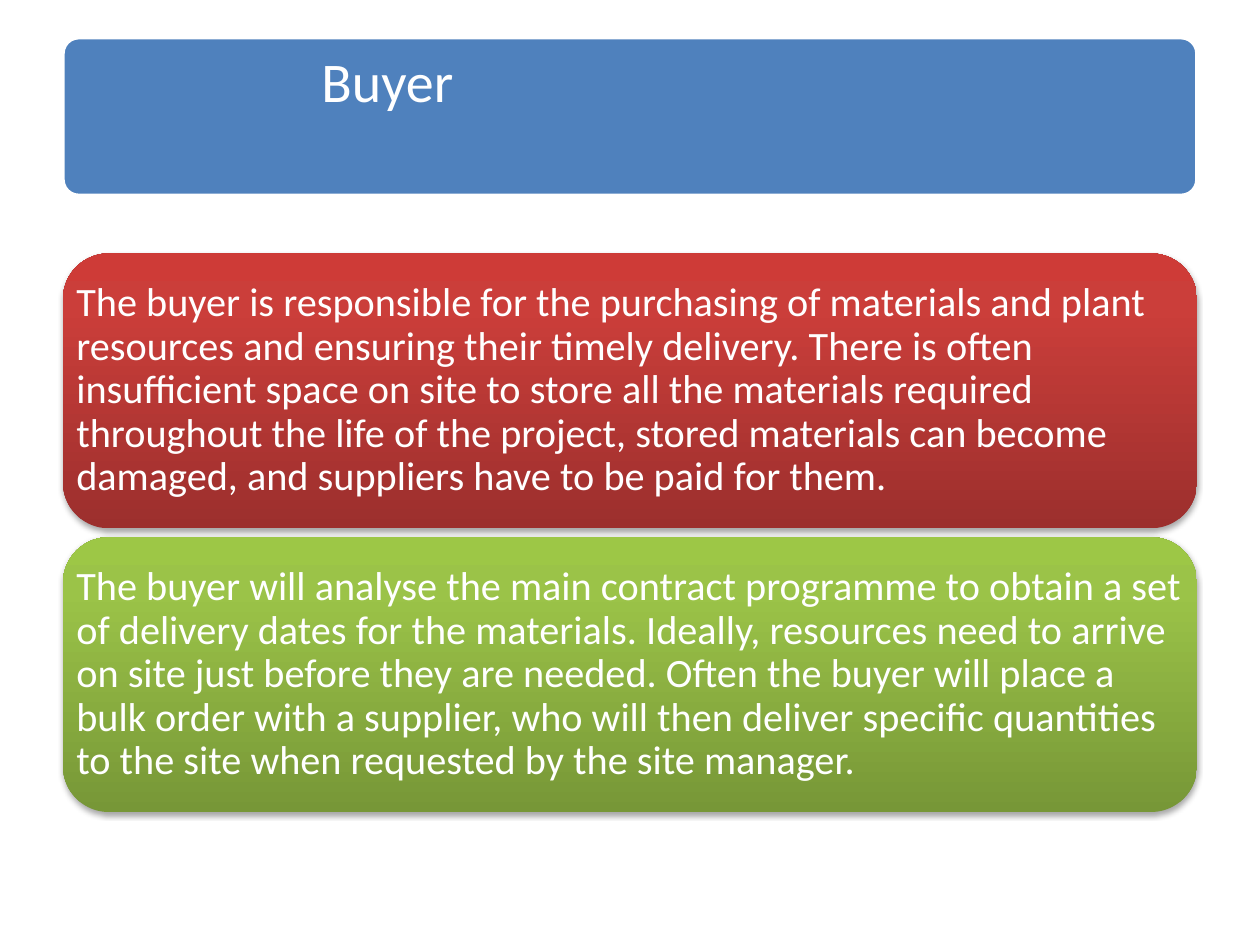
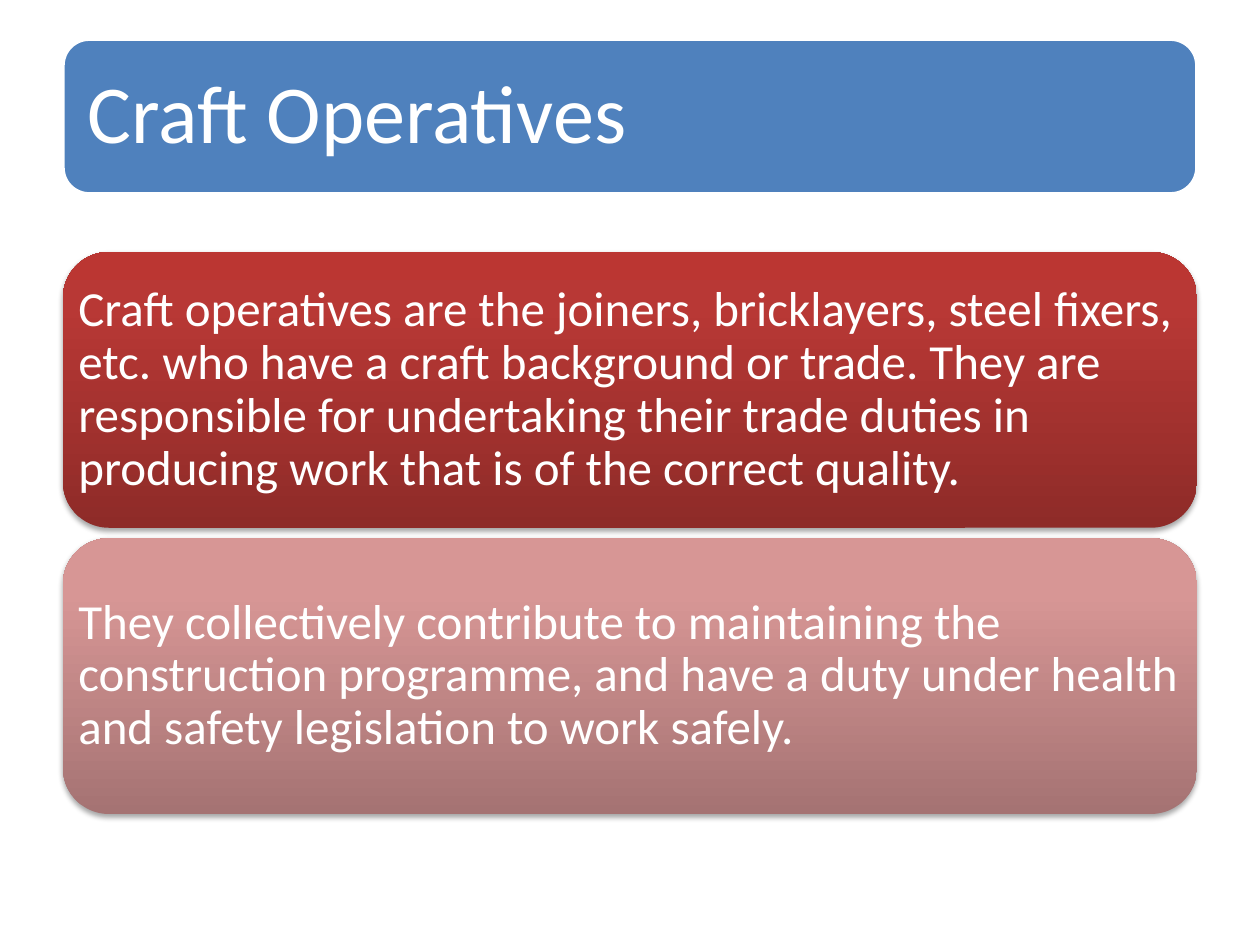
import lxml.etree
import pptx
import pptx.dml.color
import pptx.enum.shapes
import pptx.enum.text
import pptx.oxml.ns
import pptx.util

Cm = pptx.util.Cm
Pt = pptx.util.Pt
qn = pptx.oxml.ns.qn
Anchor = pptx.enum.text.MSO_ANCHOR

SLIDES = [
    {
        "title": {"text": "Buyer", "size": 32, "left": 6.15, "inset": 0.33, "anchor": Anchor.TOP},
        "band": {"top": 0.76, "height": 3.18, "corner": 0.1},
        "panels": {"top": 5.11, "height": 5.54, "step": 5.72, "inset": 0, "size": 23},
        "texts": [
            ("red", "The buyer is responsible for the purchasing of materials and plant resources "
                    "and ensuring their timely delivery. There is often insufficient space on site "
                    "to store all the materials required throughout the life of the project, stored "
                    "materials can become damaged, and suppliers have to be paid for them."),
            ("green", "The buyer will analyse the main contract programme to obtain a set of delivery "
                      "dates for the materials. Ideally, resources need to arrive on site just before "
                      "they are needed. Often the buyer will place a bulk order with a supplier, who "
                      "will then deliver specific quantities to the site when requested by the site "
                      "manager."),
        ],
    },
    {
        "title": {"text": "Craft Operatives", "size": 47, "left": 1.27, "inset": 0.5, "anchor": Anchor.MIDDLE},
        "band": {"top": 0.79, "height": 3.12, "corner": 0.17},
        "panels": {"top": 5.08, "height": 5.56, "step": 5.77, "inset": 0.04, "size": 28},
        "texts": [
            ("dark red", "Craft operatives are the joiners, bricklayers, steel fixers, etc. who have a "
                         "craft background or trade. They are responsible for undertaking their trade "
                         "duties in producing work that is of the correct quality."),
            ("rose", "They collectively contribute to maintaining the construction programme, and have "
                     "a duty under health and safety legislation to work safely."),
        ],
    },
]

COLOURS = {"band": "4F81BD", "white": "FFFFFF", "shadow": "000000"}
GRADIENTS = {
    "red": ("9C2F2D", "CB3E3A", "CE3B37"),
    "green": ("779737", "9BC348", "9DC746"),
    "dark red": ("8E2B28", "B83835", "BB3632"),
    "rose": ("A57373", "D79695", "D99594"),
}
STOPS = (0, 80, 100)
FONT = "Calibri"
LEFT, WIDTH = 1.27, 22.86
TITLE_ONLY = 5


def colour(name):
    return pptx.dml.color.RGBColor.from_string(COLOURS[name])


def assign(target, values):
    for name, value in values.items():
        setattr(target, name, value)


def add_child(parent, tag, **attributes):
    return lxml.etree.SubElement(parent, qn(tag), {key: str(value) for key, value in attributes.items()})


def write(shape, text, size, inset, anchor):
    frame = shape.text_frame
    frame.text = text
    sides = ("margin_left", "margin_top", "margin_right", "margin_bottom")
    assign(frame, dict.fromkeys(sides, Cm(inset)))
    assign(frame, {"word_wrap": True, "vertical_anchor": anchor,
                   "auto_size": pptx.enum.text.MSO_AUTO_SIZE.NONE})
    para = frame.paragraphs[0]
    assign(para, {"alignment": pptx.enum.text.PP_ALIGN.LEFT, "line_spacing": 0.9})
    span = para.runs[0]
    assign(span.font, {"name": FONT, "size": Pt(size)})
    span.font.color.rgb = colour("white")


def add_rounded(page, top, height):
    shape = page.shapes.add_shape(pptx.enum.shapes.MSO_SHAPE.ROUNDED_RECTANGLE,
                                  Cm(LEFT), Cm(top), Cm(WIDTH), Cm(height))
    shape.shadow.inherit = False
    return shape


def add_title(page, title, band):
    box = add_rounded(page, band["top"], band["height"])
    box.adjustments[0] = band["corner"]
    box.fill.solid()
    box.fill.fore_color.rgb = colour("band")
    box.line.color.rgb = colour("white")
    box.line.width = Pt(2)

    heading = page.shapes.title
    heading._element.addprevious(box._element)
    assign(heading, {"left": Cm(title["left"]), "top": Cm(band["top"]),
                     "width": Cm(LEFT + WIDTH - title["left"]), "height": Cm(band["height"])})
    write(heading, title["text"], title["size"], title["inset"], title["anchor"])


def paint_gradient(shape, shades):
    shape.fill.gradient()
    shape.fill.gradient_angle = 90
    stops = shape._element.spPr.find(qn("a:gradFill")).find(qn("a:gsLst"))
    for stop in list(stops):
        stops.remove(stop)
    for position, shade in zip(STOPS, shades):
        stop = add_child(stops, "a:gs", pos=position * 1000)
        add_child(stop, "a:srgbClr", val=shade)


def cast_shadow(shape):
    effects = shape._element.spPr.find(qn("a:effectLst"))
    shadow = add_child(effects, "a:outerShdw", blurRad=Pt(3.1), dist=Pt(1.8),
                       dir=90 * 60000, rotWithShape=0)
    tint = add_child(shadow, "a:srgbClr", val=COLOURS["shadow"])
    add_child(tint, "a:alpha", val=35000)


def add_panels(page, panels, texts):
    for row, (shades, text) in enumerate(texts):
        panel = add_rounded(page, panels["top"] + row * panels["step"], panels["height"])
        panel.line.fill.background()
        paint_gradient(panel, GRADIENTS[shades])
        cast_shadow(panel)
        write(panel, text, panels["size"], panels["inset"], Anchor.MIDDLE)


def main():
    deck = pptx.Presentation()
    assign(deck, {"slide_width": Cm(25.4), "slide_height": Cm(19.05)})
    for content in SLIDES:
        page = deck.slides.add_slide(deck.slide_layouts[TITLE_ONLY])
        add_title(page, content["title"], content["band"])
        add_panels(page, content["panels"], content["texts"])
    deck.save("out.pptx")


if __name__ == "__main__":
    main()
